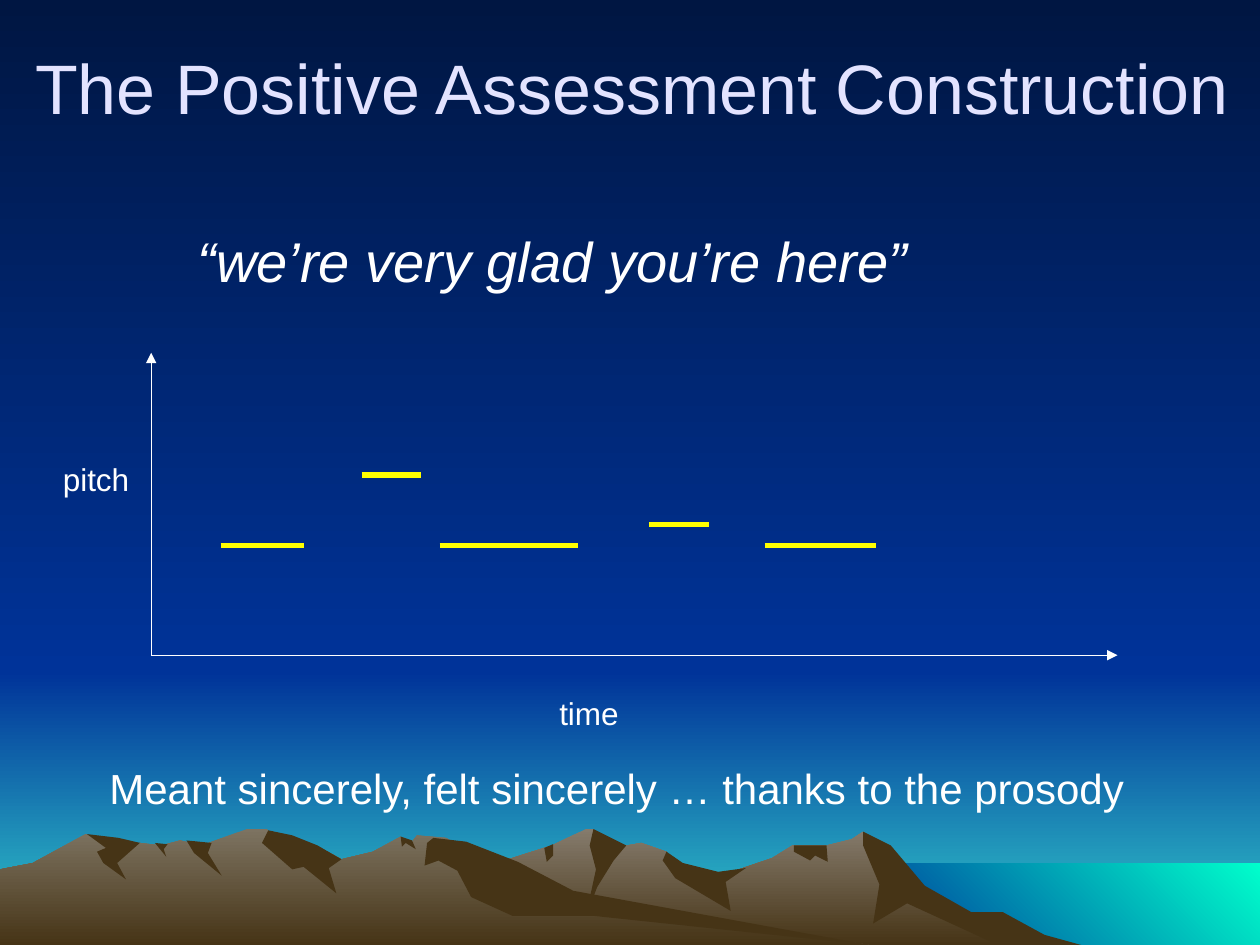
import pptx
import pptx.dml.color
import pptx.enum.shapes
import pptx.enum.text
import pptx.oxml.ns
import pptx.oxml.xmlchemy
import pptx.util
from pptx.dml.color import RGBColor
from pptx.util import Inches, Pt

NIGHT = RGBColor(0x00, 0x16, 0x42)
BLUE = RGBColor(0x00, 0x33, 0x99)
TEAL = RGBColor(0x33, 0xCC, 0xCC)
AQUA = RGBColor(0x00, 0xFF, 0xCC)
STONE = RGBColor(0x85, 0x7B, 0x6C)
ROCK = RGBColor(0x7D, 0x73, 0x61)
BROWN = RGBColor(0x46, 0x34, 0x16)
LAVENDER = RGBColor(0xE3, 0xE3, 0xFF)
WHITE = RGBColor(0xFF, 0xFF, 0xFF)
YELLOW = RGBColor(0xFF, 0xFF, 0x00)

WIDTH, HEIGHT = 10, 7.5
HORIZON, WATERLINE, SHORE = 5.33, 6.85, 6.83
DOWN, UP_RIGHT = 270, 45
CENTER = pptx.enum.text.PP_ALIGN.CENTER
LEFT = pptx.enum.text.PP_ALIGN.LEFT


def set_gradient(fill, start, end, angle):
    fill.gradient()
    fill.gradient_angle = angle
    for stop, color in zip(fill.gradient_stops, (start, end)):
        stop.color.rgb = color


def add_line(s, start, end, color, width):
    line = s.shapes.add_connector(
        pptx.enum.shapes.MSO_CONNECTOR.STRAIGHT,
        *[Inches(v) for v in (*start, *end)])
    line.line.color.rgb = color
    line.line.width = Pt(width)
    line._element.spPr.append(pptx.oxml.xmlchemy.OxmlElement("a:effectLst"))
    return line


prs = pptx.Presentation()
prs.slide_width = Inches(WIDTH)
prs.slide_height = Inches(HEIGHT)
s = prs.slides.add_slide(prs.slide_layouts[6])
set_gradient(s.background.fill, NIGHT, BLUE, DOWN)

scenery = []
for left, top, bottom, start, end, angle in [
        (0, HORIZON, HEIGHT, BLUE, TEAL, DOWN),
        (0, 0, HORIZON, NIGHT, BLUE, DOWN),
        (SHORE, WATERLINE, HEIGHT, BLUE, AQUA, UP_RIGHT)]:
    corners = [(left, top), (WIDTH, top), (WIDTH, bottom), (left, bottom)]
    scenery.append((corners, start, end, angle))

right_crest = [
    (2.58, HEIGHT), (2.77, 7.39), (3.27, 7.09), (3.94, 6.85), (4.38, 6.71), (4.65, 6.58),
    (4.71, 6.58), (4.86, 6.73), (5.09, 6.69), (5.29, 6.76), (5.36, 6.9), (5.66, 6.97),
    (6.13, 6.81), (6.29, 6.71), (6.56, 6.71), (6.76, 6.66), (6.85, 6.6), (7.02, 6.71),
    (7.23, 6.98), (7.64, 7.23), (8.21, HEIGHT)]
left_crest = [
    (0, HEIGHT), (0, 6.9), (0.26, 6.85), (0.68, 6.62), (0.94, 6.71), (1.11, 6.69),
    (1.28, 6.71), (1.43, 6.67), (1.6, 6.71), (1.96, 6.58), (2.12, 6.58), (2.36, 6.81),
    (2.6, 6.76), (2.71, 6.82), (2.96, 6.76), (3.18, 6.64), (3.27, 6.68), (3.31, 6.63),
    (3.54, 6.65), (4.32, 7.12), (6.9, HEIGHT)]

right_shadows = {
    "far slope": [
        (6.85, 6.6), (7.07, 6.71), (7.34, 7.03), (7.71, 7.24), (7.96, 7.24), (8.29, 7.42),
        (8.58, HEIGHT), (7.92, HEIGHT), (7.2, 7.17), (6.93, 7.33), (6.98, 7.02), (6.85, 6.71)],
    "middle peak": [
        (4.71, 6.58), (4.97, 6.71), (4.87, 6.83), (4.74, 7.04), (4.65, 7.27), (4.73, 6.9),
        (4.68, 6.71)],
    "saddle": [
        (5.29, 6.76), (5.42, 6.85), (5.7, 6.92), (5.92, 6.89), (5.76, 7), (5.8, 7.23),
        (5.36, 6.97), (5.26, 6.83)],
    "shoulder": [(6.3, 6.71), (6.56, 6.71), (6.57, 6.84), (6.47, 6.79), (6.43, 6.83), (6.3, 6.76)],
    "notch": [(4.32, 6.73), (4.39, 6.7), (4.39, 6.79), (4.34, 6.84)]}
left_shadows = {
    "main peak": [
        (2.13, 6.59), (2.32, 6.63), (2.52, 6.71), (2.71, 6.82), (2.61, 6.89), (2.67, 7.09),
        (2.41, 6.88), (2.32, 6.9), (2.08, 6.69)],
    "long slope": [
        (3.44, 6.65), (3.7, 6.68), (4.11, 6.84), (4.55, 7.07), (6.9, HEIGHT), (4.72, 7.27),
        (4.07, 7.27), (3.74, 7.12), (3.63, 6.91), (3.48, 6.83), (3.37, 6.87), (3.39, 6.69)],
    "tip": [(3.18, 6.64), (3.27, 6.67), (3.3, 6.74), (3.22, 6.69), (3.19, 6.72)],
    "gully": [(1.48, 6.67), (1.68, 6.69), (1.65, 6.77), (1.76, 6.95), (1.54, 6.77)],
    "crack": [(1.23, 6.69), (1.33, 6.7), (1.3, 6.74), (1.32, 6.8)],
    "first peak": [
        (0.69, 6.62), (0.94, 6.65), (1.11, 6.69), (0.93, 6.85), (1, 6.98), (0.82, 6.85),
        (0.77, 6.76), (0.84, 6.73)]}

for crest, top_color, shadows in [(right_crest, STONE, right_shadows),
                                  (left_crest, ROCK, left_shadows)]:
    scenery.append((crest, top_color, BROWN, DOWN))
    for outline in shadows.values():
        scenery.append((outline, BROWN, BROWN, DOWN))

for outline, start, end, angle in scenery:
    points = [(Inches(x), Inches(y)) for x, y in outline]
    builder = s.shapes.build_freeform(*points[0])
    builder.add_line_segments(points[1:], close=True)
    sp = builder.convert_to_shape()
    sp.shadow.inherit = False
    sp.line.fill.background()
    if start == end:
        sp.fill.solid()
        sp.fill.fore_color.rgb = start
    else:
        set_gradient(sp.fill, start, end, angle)

LOW, MIDDLE, HIGH = 4.33, 4.16, 3.77
for start, end, pitch in [(1.75, 2.41, LOW), (2.87, 3.34, HIGH), (3.49, 4.59, LOW),
                          (5.15, 5.63, MIDDLE), (6.07, 6.95, LOW)]:
    add_line(s, (start, pitch), (end, pitch), YELLOW, 3)

origin, pitch_end, time_end = (1.2, 5.2), (1.2, 2.8), (8.87, 5.2)
for axis_end in (pitch_end, time_end):
    axis = add_line(s, origin, axis_end, WHITE, 0.75)
    arrow = pptx.oxml.xmlchemy.OxmlElement("a:tailEnd")
    arrow.set("type", "triangle")
    axis._element.spPr.find(pptx.oxml.ns.qn("a:ln")).append(arrow)

for text, box, size, color, align, italic, wrap, before in [
        ("The Positive Assessment Construction",
         (0.1, 0.06, 9.83, 1.25), 40, LAVENDER, CENTER, False, True, 0),
        ("“we’re very glad you’re here”",
         (1.47, 1.75, 8.53, 0.9), 32, WHITE, LEFT, True, True, 6),
        ("pitch", (0.4, 3.6, 0.73, 0.4), 18, WHITE, LEFT, False, False, 0),
        ("time", (4.34, 5.46, 0.68, 0.4), 18, WHITE, LEFT, False, False, 0),
        ("Meant sincerely, felt sincerely … thanks to the prosody",
         (0.77, 6, 9.23, 0.5), 24, WHITE, LEFT, False, True, 0)]:
    tf = s.shapes.add_textbox(*[Inches(v) for v in box]).text_frame
    tf.word_wrap = wrap
    if align == CENTER:
        tf.vertical_anchor = pptx.enum.text.MSO_ANCHOR.MIDDLE
    p = tf.paragraphs[0]
    p.alignment = align
    p.space_before = Pt(before)
    r = p.add_run()
    r.text = text
    r.font.name = "Arial"
    r.font.size = Pt(size)
    r.font.italic = italic
    r.font.color.rgb = color

prs.save("out.pptx")
